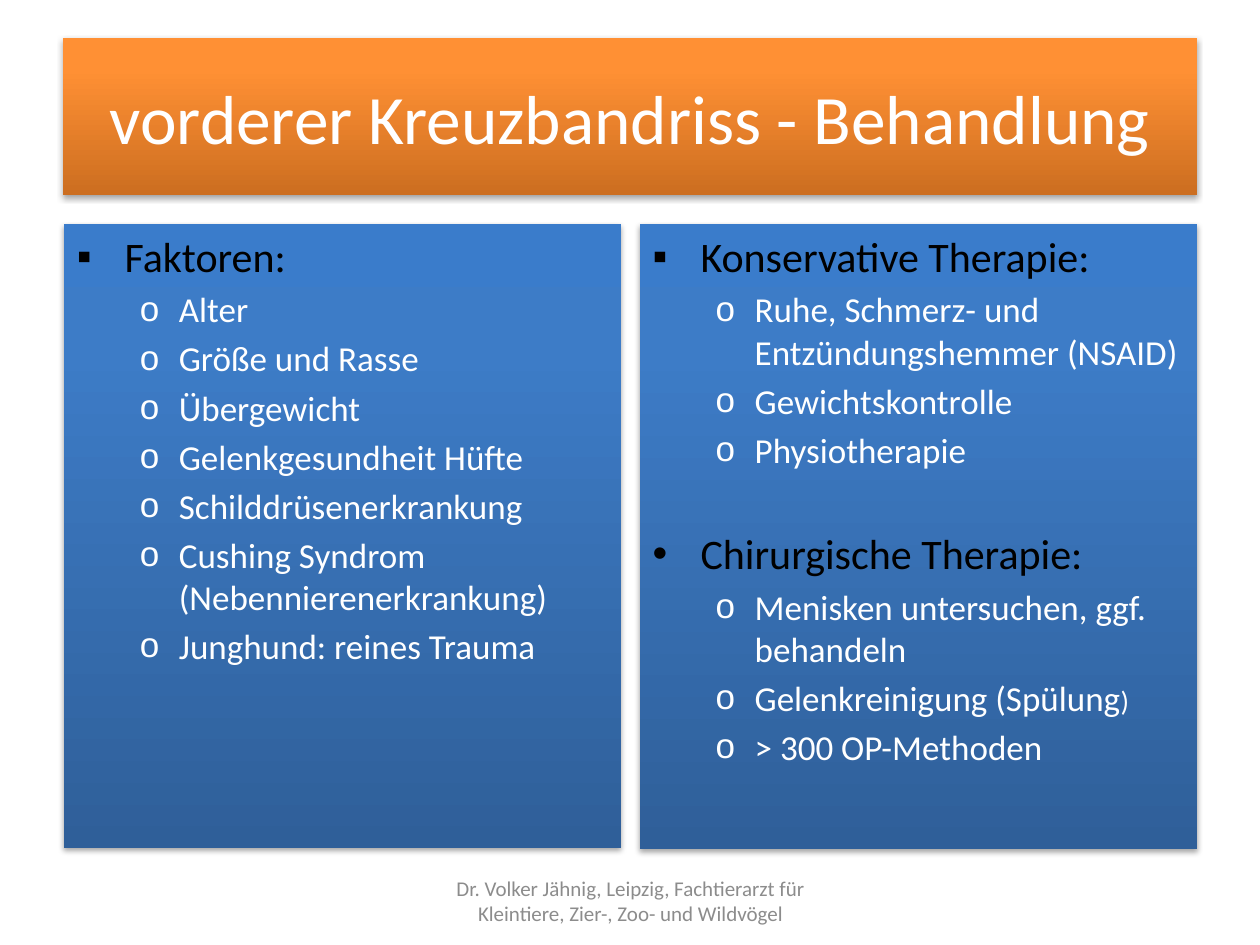
"""Build a slide on the treatment of cruciate ligament tears."""
from dataclasses import dataclass

from lxml import etree
from pptx import Presentation
from pptx.dml.color import RGBColor
from pptx.enum.text import MSO_ANCHOR, MSO_AUTO_SIZE, PP_ALIGN
from pptx.oxml.ns import qn
from pptx.util import Inches, Pt

MIDDLE = MSO_ANCHOR.MIDDLE
CENTER = PP_ALIGN.CENTER
NO_AUTOFIT = MSO_AUTO_SIZE.NONE
FONT = "Calibri"
WHITE, BLACK, GRAY = "FFFFFF", "000000", "8C8C8C"
ORANGE_STOPS = ((0, "CC6E20"), (80, "FF9034"), (100, "FF9136"))
BLUE_STOPS = ((0, "2F5F99"), (80, "3D7CC7"), (100, "3A7CCB"))


@dataclass(frozen=True)
class Style:
    level: int
    size: int
    color: str
    margin: float
    indent: float


@dataclass(frozen=True)
class Section:
    bullet: str
    heading: str
    items: tuple
    space_before: float = 4.8


@dataclass(frozen=True)
class Panel:
    placeholder: int
    left: float
    height: float
    sections: tuple


HEADING = Style(0, 24, BLACK, 0.38, -0.38)
ITEM = Style(1, 20, WHITE, 0.81, -0.31)

PANELS = (
    Panel(1, 0.51, 4.95, (
        Section("▪", "Faktoren:", (
            "Alter",
            "Größe und Rasse",
            "Übergewicht",
            "Gelenkgesundheit Hüfte",
            "Schilddrüsenerkrankung",
            "Cushing Syndrom (Nebennierenerkrankung)",
            "Junghund: reines Trauma",
        )),
    )),
    Panel(2, 5.08, 4.96, (
        Section("▪", "Konservative Therapie:", (
            "Ruhe, Schmerz- und Entzündungshemmer (NSAID)",
            "Gewichtskontrolle",
            "Physiotherapie",
        )),
        Section("•", "Chirurgische Therapie:", (
            "Menisken untersuchen, ggf. behandeln",
            ("Gelenkreinigung (Spülung", ")"),
            "> 300 OP-Methoden",
        ), 33),
    )),
)


def add_run(paragraph, text: str, size: float, color: str) -> None:
    run = paragraph.add_run()
    run.text = text
    run.font.name = FONT
    run.font.size = Pt(size)
    run.font.color.rgb = RGBColor.from_string(color)


def place(shape, left: float, top: float, width: float, height: float) -> None:
    shape.left, shape.top = Inches(left), Inches(top)
    shape.width, shape.height = Inches(width), Inches(height)


def add_color(parent, color: str):
    return etree.SubElement(parent, qn("a:srgbClr"), val=color)


def decorate(shape, stops: tuple) -> None:
    properties = shape.element.spPr
    gradient = etree.SubElement(properties, qn("a:gradFill"), rotWithShape="1")
    stop_list = etree.SubElement(gradient, qn("a:gsLst"))
    for position, color in stops:
        add_color(etree.SubElement(stop_list, qn("a:gs"), pos=str(position * 1000)), color)
    etree.SubElement(gradient, qn("a:lin"), ang="16200000", scaled="0")
    effects = etree.SubElement(properties, qn("a:effectLst"))
    shadow = etree.SubElement(
        effects, qn("a:outerShdw"), blurRad=str(Pt(3.1)), dist=str(Pt(1.8)),
        dir="5400000", rotWithShape="0")
    etree.SubElement(add_color(shadow, BLACK), qn("a:alpha"), val="35000")


def format_paragraph(paragraph, style: Style, bullet: str, space_before: float) -> None:
    paragraph.level = style.level
    paragraph.space_before = Pt(space_before)
    properties = paragraph._p.get_or_add_pPr()
    properties.set("marL", str(Inches(style.margin)))
    properties.set("indent", str(Inches(style.indent)))
    etree.SubElement(properties, qn("a:buChar"), char=bullet)


def fill_panel(shape, panel: Panel) -> None:
    place(shape, panel.left, 1.78, 4.42, panel.height)
    decorate(shape, BLUE_STOPS)
    frame = shape.text_frame
    frame.auto_size = NO_AUTOFIT
    for number, section in enumerate(panel.sections):
        paragraph = frame.add_paragraph() if number else frame.paragraphs[0]
        format_paragraph(paragraph, HEADING, section.bullet, section.space_before)
        add_run(paragraph, section.heading, HEADING.size, HEADING.color)
        for item in section.items:
            paragraph = frame.add_paragraph()
            format_paragraph(paragraph, ITEM, "o", 4)
            text, small_text = (item, "") if isinstance(item, str) else item
            add_run(paragraph, text, ITEM.size, ITEM.color)
            if small_text:
                add_run(paragraph, small_text, 16, ITEM.color)


def fill_centered(shape, text: str, size: float, color: str) -> None:
    frame = shape.text_frame
    frame.word_wrap = True
    frame.auto_size = NO_AUTOFIT
    frame.vertical_anchor = MIDDLE
    paragraph = frame.paragraphs[0]
    paragraph.alignment = CENTER
    add_run(paragraph, text, size, color)


def main() -> None:
    presentation = Presentation()
    presentation.slide_width, presentation.slide_height = Inches(10), Inches(7.5)
    slide = presentation.slides.add_slide(presentation.slide_layouts[3])

    title = slide.shapes.title
    place(title, 0.5, 0.3, 9, 1.25)
    decorate(title, ORANGE_STOPS)
    fill_centered(title, "vorderer Kreuzbandriss - Behandlung", 39.6, WHITE)

    for panel in PANELS:
        fill_panel(slide.placeholders[panel.placeholder], panel)

    footer = slide.shapes.add_textbox(Inches(3.42), Inches(6.95), Inches(3.17), Inches(0.4))
    fill_centered(
        footer,
        "Dr. Volker Jähnig, Leipzig, Fachtierarzt für Kleintiere, Zier-, Zoo- und Wildvögel",
        12, GRAY)
    presentation.save("out.pptx")


if __name__ == "__main__":
    main()
